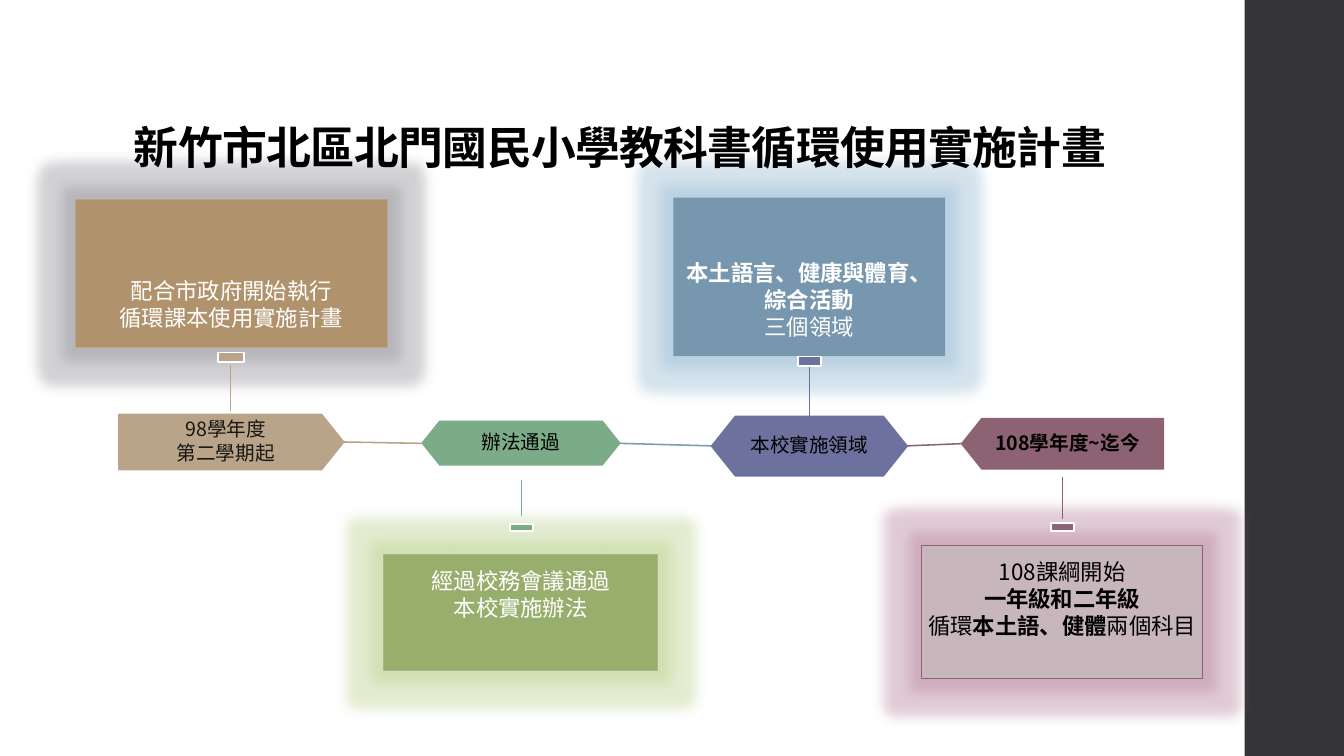
import pptx
import pptx.util
import pptx.dml.color
import pptx.enum.shapes
import pptx.enum.text
import pptx.oxml
import pptx.oxml.ns

Pt = pptx.util.Pt
KIND = pptx.enum.shapes.MSO_SHAPE
ALIGN = pptx.enum.text.PP_ALIGN
ANCHOR = pptx.enum.text.MSO_ANCHOR
qn = pptx.oxml.ns.qn

TC, SC = "Noto Sans CJK TC", "Noto Sans CJK SC"
HUES = {
    "white": "FFFFFF", "black": "000000", "ink": "171613", "side": "353537",
    "tan": "B9A489", "green": "7BAC87", "teal": "74A1A5",
    "blue": "6D719E", "plum": "8D6374",
    "wood": "B0926C", "leaf": "97AE6D", "moss": "A7B789",
    "sky": "7797AE", "rose": "C7B6BC",
    "fog": "8F8E96", "lime": "B9D08B", "pale": "96B9D2", "pink": "B5809A",
}
TITLE = "新竹市北區北門國民小學教科書循環使用實施計畫"

# Each line of text is a list of (words, bold) runs.
STEPS = [
    dict(kind=KIND.PENTAGON, box=(85, 296, 160.5, 39.5), hue="tan", ink="ink",
         text=[[("98學年度", False)], [("第二學期起", False)]]),
    dict(kind=KIND.HEXAGON, box=(301.7, 301, 141, 31), hue="green", ink="black",
         text=[[("辦法通過", False)]]),
    dict(kind=KIND.HEXAGON, box=(508.3, 297.4, 139.7, 42.5), hue="blue", ink="black",
         text=[[("本校實施領域", False)]]),
    dict(kind=KIND.PENTAGON, box=(687, 299, 144, 36), hue="plum", ink="black", flip=True,
         text=[[("108學年度~迄今", True)]]),
]
CARDS = [
    dict(box=(54, 142.5, 222.5, 105.8), fill="wood", line="tan", glow="fog",
         font=SC, ink="white", anchor=ANCHOR.BOTTOM,
         text=[[("配合市政府開始執行", False)], [("循環課本使用實施計畫", False)]]),
    dict(box=(274, 396, 196, 82.8), fill="leaf", line="moss", glow="lime",
         font=TC, ink="white", anchor=ANCHOR.TOP,
         text=[[("經過校務會議通過", False)], [("本校實施辦法", False)]]),
    dict(box=(481, 141.2, 194.2, 113.2), fill="sky", line=None, glow="pale",
         font=SC, ink="white", anchor=ANCHOR.BOTTOM,
         text=[[("本土語言、健康與體育、", True)], [("綜合活動", True)],
               [("三個領域", False)]]),
    dict(box=(658.5, 389.5, 200.5, 95.3), fill="rose", line="plum", glow="pink",
         font=TC, ink="black", anchor=ANCHOR.TOP,
         text=[[("108課綱開始", False)], [("一年級和二年級", True)],
               [("循環", False), ("本土語、健體", True), ("兩個科目", False)]]),
]
# Stem: x, top, bottom; tab: width, height, top
STEMS = [
    ((165, 260.6, 293.8), (18.7, 6.7, 251.8)),
    ((372.3, 342.7, 368.6), (16.4, 5, 374.4)),
    ((578.2, 262, 297.4), (16.2, 6.8, 254.7)),
    ((758.8, 340.6, 370.8), (16.6, 6, 373.6)),
]
LINKS = [
    ((245.5, 315.7), (301.7, 316.7), "tan"),
    ((442.7, 316.7), (508.3, 318.5), "teal"),
    ((648, 318.5), (687, 316.9), "plum"),
]


def tint(name):
    return pptx.dml.color.RGBColor.from_string(HUES[name])


def put(shape, lines, size, ink, font, anchor, align=ALIGN.CENTER,
        inset=(0, 0), space=0, track=None):
    """Fill a shape with lines of runs; inset is (side, top and bottom)."""
    frame = shape.text_frame
    frame.word_wrap = True
    frame.vertical_anchor = anchor
    frame.margin_left = frame.margin_right = Pt(inset[0])
    frame.margin_top = frame.margin_bottom = Pt(inset[1])
    for i, line in enumerate(lines):
        para = frame.add_paragraph() if i else frame.paragraphs[0]
        para.alignment = align
        para.line_spacing = 0.9
        para.space_after = Pt(space)
        for words, bold in line:
            run = para.add_run()
            run.text = words
            run.font.size, run.font.bold, run.font.name = Pt(size), bold, font
            run.font.color.rgb = tint(ink)
            props = run.font._element
            pptx.oxml.ns.qn
            east = props.makeelement(qn("a:ea"), {"typeface": font})
            props.find(qn("a:latin")).addnext(east)
            if track:
                props.set("spc", str(round(track * 100)))


def draw(kind, box, fill, line=None, width=0.75):
    shape = slide.shapes.add_shape(kind, *map(Pt, box))
    shape.shadow.inherit = False
    shape.fill.solid()
    shape.fill.fore_color.rgb = tint(fill)
    if line:
        shape.line.color.rgb = tint(line)
        shape.line.width = Pt(width)
    else:
        shape.line.fill.background()
    return shape


def join(start, end, hue, width):
    link = slide.shapes.add_connector(
        pptx.enum.shapes.MSO_CONNECTOR.STRAIGHT, *map(Pt, start + end))
    link.line.color.rgb = tint(hue)
    link.line.width = Pt(width)
    props = link._element.spPr
    props.append(props.makeelement(qn("a:effectLst"), {}))


def glow(shape, hue, reach=18, alpha=40):
    space = pptx.oxml.ns.nsdecls("a")
    shape._element.spPr.find(qn("a:effectLst")).append(pptx.oxml.parse_xml(
        f'<a:glow {space} rad="{Pt(reach)}"><a:srgbClr val="{HUES[hue]}">'
        f'<a:alpha val="{alpha * 1000}"/></a:srgbClr></a:glow>'))


deck = pptx.Presentation()
deck.slide_width, deck.slide_height = Pt(960), Pt(540)
slide = deck.slides.add_slide(deck.slide_layouts[6])

draw(KIND.RECTANGLE, (889, 0, 71, 540), "side")
for card in CARDS:
    shape = draw(KIND.RECTANGLE, card["box"], card["fill"], card["line"])
    glow(shape, card["glow"])
    put(shape, card["text"], 16, card["ink"], card["font"], card["anchor"],
        inset=(0, 11.5), space=2)
for start, end, hue in LINKS:
    join(start, end, hue, 1.1)
for step, (stem, tab) in zip(STEPS, STEMS):
    hue = step["hue"]
    shape = draw(step["kind"], step["box"], hue, hue, 1.1)
    shape.adjustments[0] = 0.4
    if step.get("flip"):
        shape._element.spPr.find(qn("a:xfrm")).set("flipH", "1")
    put(shape, step["text"], 14, step["ink"], TC, ANCHOR.MIDDLE,
        inset=(8.6, 8.6), space=2)
    x, top, bottom = stem
    join((x, top), (x, bottom), hue, 0.75)
    wide, high, y = tab
    draw(KIND.RECTANGLE, (x - wide / 2, y, wide, high), hue, "white", 1.35)

title = slide.shapes.add_textbox(*map(Pt, (88.6, 23.8, 763, 104.4)))
put(title, [[(TITLE, True)]], 32, "black", TC, ANCHOR.BOTTOM,
    align=ALIGN.LEFT, inset=(7.2, 3.6), track=-0.5)
deck.save("out.pptx")
